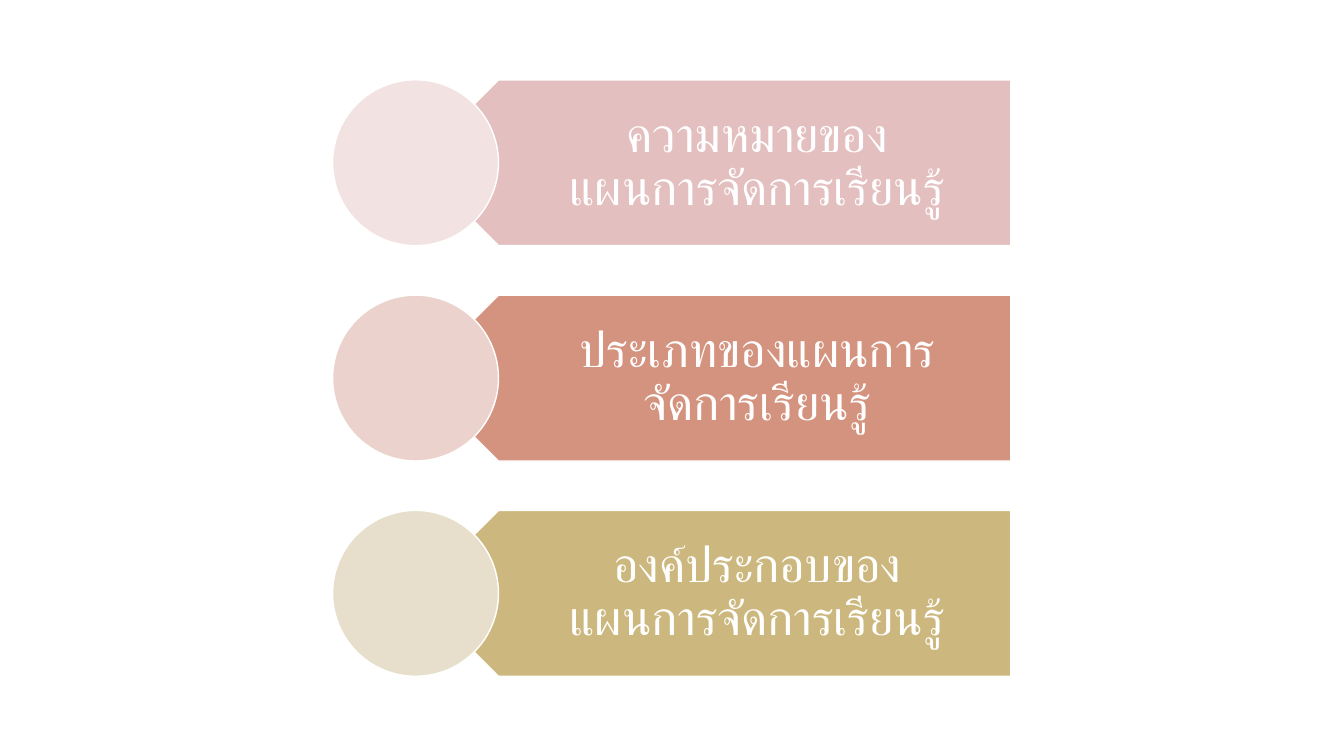
import pptx
import pptx.util
import pptx.dml.color
import pptx.enum.shapes
import pptx.enum.text

Pt = pptx.util.Pt
SHAPES = pptx.enum.shapes.MSO_SHAPE

COLORS = {
    "white": "FFFFFF",
    "rose": "E3C0BF", "pale rose": "F2E2E2",
    "clay": "D4937F", "pale clay": "EBD2CC",
    "sand": "CCB87E", "pale sand": "E7DFCC",
}
TOPICS = [
    ("ความหมายของ\nแผนการจัดการเรียนรู้", "rose"),
    ("ประเภทของแผนการจัดการเรียนรู้", "clay"),
    ("องค์ประกอบของ\nแผนการจัดการเรียนรู้", "sand"),
]
ROW_HEIGHT = 118.5
ROW_PITCH = 153.8


def rgb(name):
    return pptx.dml.color.RGBColor.from_string(COLORS[name])


def add_filled_shape(slide, kind, left, top, width, height, color):
    shape = slide.shapes.add_shape(kind, Pt(left), Pt(top), Pt(width), Pt(height))
    shape.shadow.inherit = False
    shape.fill.solid()
    shape.fill.fore_color.rgb = rgb(color)
    shape.line.color.rgb = rgb("white")
    shape.line.width = Pt(1)
    return shape


def add_text(slide, text, left, top, width, height, *, size=35, font="Lato",
             color="white", margins=(0, 0, 0, 0)):
    """Add centred text; margins are left, top, right, bottom."""
    box = slide.shapes.add_textbox(Pt(left), Pt(top), Pt(width), Pt(height))
    frame = box.text_frame
    frame.word_wrap = True
    frame.vertical_anchor = pptx.enum.text.MSO_ANCHOR.MIDDLE
    (frame.margin_left, frame.margin_top,
     frame.margin_right, frame.margin_bottom) = map(Pt, margins)
    paragraph = frame.paragraphs[0]
    paragraph.text = text
    paragraph.alignment = pptx.enum.text.PP_ALIGN.CENTER
    paragraph.line_spacing = 0.9
    for run in paragraph.runs:
        run.font.size = Pt(size)
        run.font.name = font
        run.font.color.rgb = rgb(color)


def add_topic_row(slide, left, top, width, height, text, color):
    """Draw a banner pointing left, its text and the circle over its tip."""
    banner_left = left + height / 2
    text_left = left + height * 0.75
    right = left + width
    banner = add_filled_shape(slide, SHAPES.PENTAGON, banner_left, top,
                              right - banner_left, height, color)
    banner.rotation = 180
    add_text(slide, text, text_left, top, right - text_left, height,
             margins=(52.6, 10.8, 19.4, 10.8))
    add_filled_shape(slide, SHAPES.OVAL, left, top, height, height, f"pale {color}")


def main():
    presentation = pptx.Presentation()
    presentation.slide_width = Pt(960)
    presentation.slide_height = Pt(540)
    slide = presentation.slides.add_slide(presentation.slide_layouts[6])
    for index, (text, color) in enumerate(TOPICS):
        add_topic_row(slide, 237.6, 57 + index * ROW_PITCH, 484.5, ROW_HEIGHT,
                      text, color)
    presentation.save("out.pptx")


if __name__ == "__main__":
    main()
